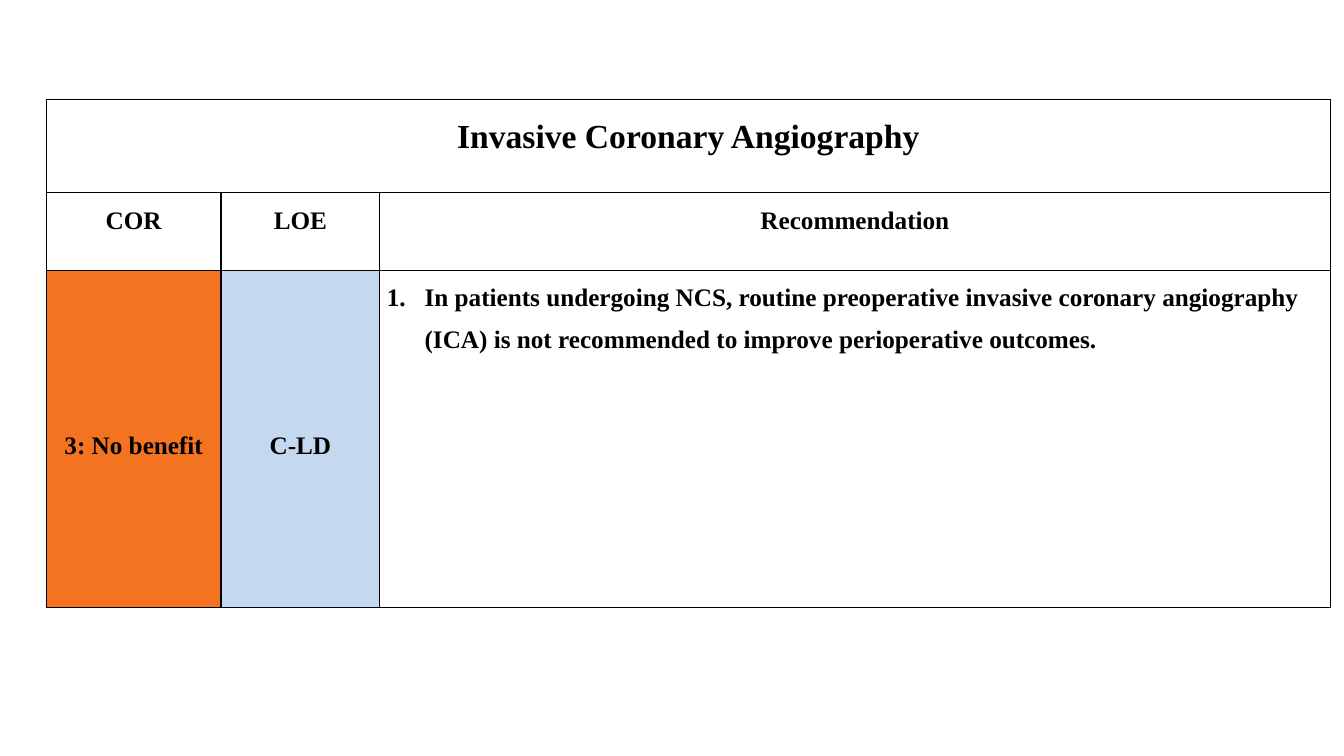
import pptx
import pptx.util
import pptx.dml.color
import pptx.enum.text
import pptx.oxml.ns
import lxml.etree

Cm = pptx.util.Cm
Pt = pptx.util.Pt
ALIGN = pptx.enum.text.PP_ALIGN
ANCHOR = pptx.enum.text.MSO_ANCHOR
COLORS = {"ink": "000000", "no_benefit": "F37321", "evidence": "C4D9F0"}


def add_xml(parent, tag, **attributes):
    return lxml.etree.SubElement(parent, pptx.oxml.ns.qn(tag), attributes)


class RecommendationSlide:
    font_name = "Times New Roman"
    border_width = Pt(1)

    def __init__(self, deck):
        self.slide = deck.slides.add_slide(deck.slide_layouts[6])

    def table(self, left, top, widths, heights):
        frame = self.slide.shapes.add_table(
            len(heights), len(widths), Cm(left), Cm(top),
            Cm(sum(widths)), Cm(sum(heights)))
        grid = frame.table
        grid.first_row = False
        grid.horz_banding = False
        for column, width in zip(grid.columns, widths):
            column.width = Cm(width)
        for row, height in zip(grid.rows, heights):
            row.height = Cm(height)
        for cell in grid.iter_cells():
            self.borders(cell)
            cell.fill.background()
        return grid

    def borders(self, cell):
        properties = cell._tc.get_or_add_tcPr()
        for side in "LRTB":
            line = add_xml(properties, f"a:ln{side}", w=str(self.border_width))
            add_xml(add_xml(line, "a:solidFill"), "a:srgbClr", val=COLORS["ink"])

    def cell(self, cell, text, size=18, fill=None, anchor=ANCHOR.TOP, numbered=False):
        cell.margin_left = cell.margin_right = Cm(0.18)
        cell.margin_top = cell.margin_bottom = 0
        cell.vertical_anchor = anchor
        if fill:
            cell.fill.solid()
            cell.fill.fore_color.rgb = pptx.dml.color.RGBColor.from_string(COLORS[fill])
        paragraph = cell.text_frame.paragraphs[0]
        paragraph.text = text
        paragraph.line_spacing = 1.5
        paragraph.alignment = ALIGN.LEFT if numbered else ALIGN.CENTER
        if numbered:
            properties = paragraph._p.get_or_add_pPr()
            properties.set("marL", str(Cm(0.95)))
            properties.set("indent", str(Cm(-0.95)))
            add_xml(properties, "a:buFont", typeface="+mj-lt")
            add_xml(properties, "a:buAutoNum", type="arabicPeriod")
        font = paragraph.font
        font.name = self.font_name
        font.size = Pt(size)
        font.bold = True
        font.color.rgb = pptx.dml.color.RGBColor.from_string(COLORS["ink"])


def main():
    deck = pptx.Presentation()
    deck.slide_width = Cm(33.87)
    deck.slide_height = Cm(19.05)
    page = RecommendationSlide(deck)

    guideline = page.table(1.17, 2.51, [4.4, 4, 23.95], [2.35, 1.95, 8.5])
    guideline.cell(0, 0).merge(guideline.cell(0, 2))
    page.cell(guideline.cell(0, 0), "Invasive Coronary Angiography", size=24)

    for column, heading in enumerate(["COR", "LOE", "Recommendation"]):
        page.cell(guideline.cell(1, column), heading)

    page.cell(guideline.cell(2, 0), "3: No benefit", fill="no_benefit", anchor=ANCHOR.MIDDLE)
    page.cell(guideline.cell(2, 1), "C-LD", fill="evidence", anchor=ANCHOR.MIDDLE)
    page.cell(
        guideline.cell(2, 2),
        "In patients undergoing NCS, routine preoperative invasive coronary angiography "
        "(ICA) is not recommended to improve perioperative outcomes.",
        numbered=True)

    deck.save("out.pptx")


if __name__ == "__main__":
    main()
